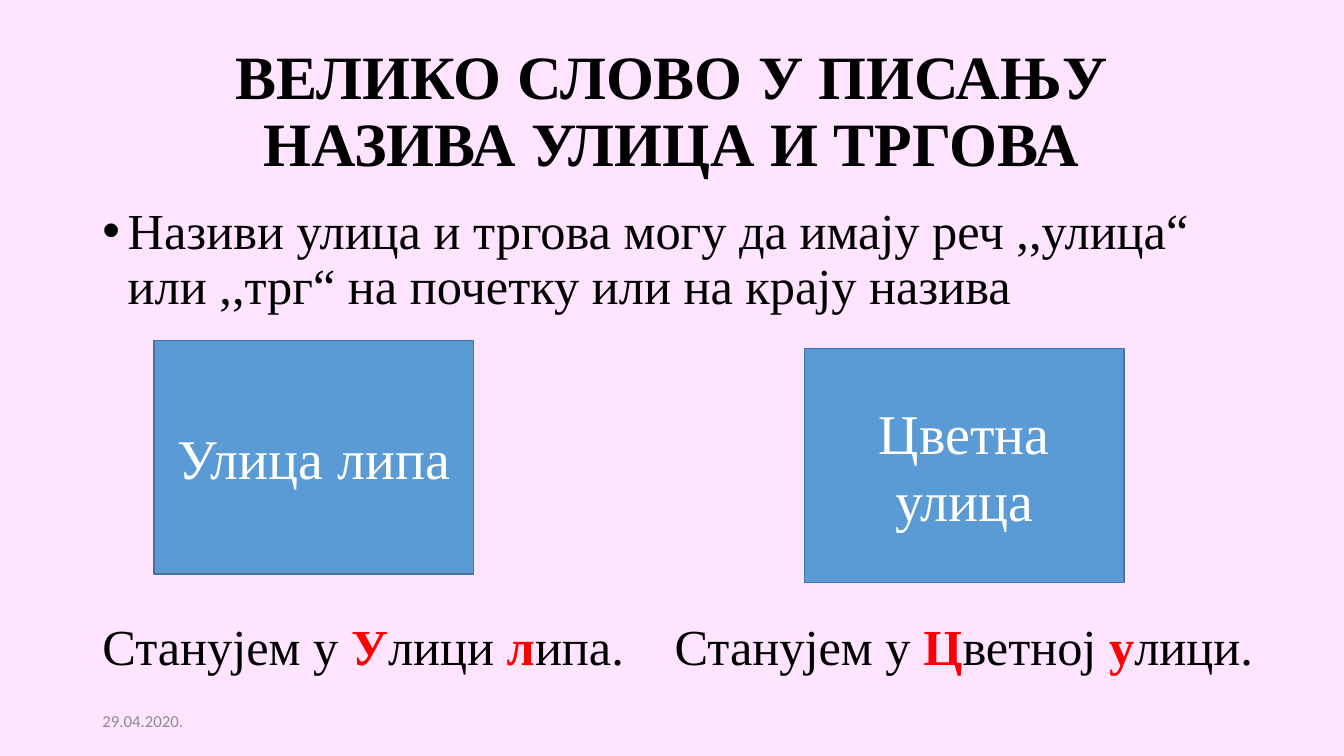
"""Build a slide on capital letters in the names of streets and squares."""
from lxml.etree import SubElement
from pptx import Presentation
from pptx.dml.color import RGBColor
from pptx.enum.shapes import MSO_SHAPE
from pptx.enum.text import MSO_ANCHOR, MSO_AUTO_SIZE, PP_ALIGN
from pptx.oxml.ns import qn
from pptx.util import Cm, Pt

COLORS = {
    "background": "FFE4FF",
    "text": "000000",
    "accent": "FF0000",
    "date": "8C8C8C",
    "box": "5B9BD5",
    "box_line": "43739E",
    "box_text": "FFFFFF",
}
SERIF = "Times New Roman"
MARGIN_LEFT, CONTENT_WIDTH = 2.33, 29.21


def color(name):
    return RGBColor.from_string(COLORS[name])


def write(shape, runs, size, anchor=MSO_ANCHOR.TOP, font=SERIF, **paragraph_format):
    """Fill a shape with one paragraph of (text, color name, bold) runs."""
    frame = shape.text_frame
    frame.word_wrap = True
    frame.auto_size = MSO_AUTO_SIZE.NONE
    frame.vertical_anchor = anchor
    paragraph = frame.paragraphs[0]
    for name, value in paragraph_format.items():
        setattr(paragraph, name, value)
    for text, color_name, bold in runs:
        run = paragraph.add_run()
        run.text = text
        run.font.color.rgb = color(color_name)
        for name, value in {"name": font, "size": Pt(size), "bold": bold}.items():
            setattr(run.font, name, value)
    return paragraph


presentation = Presentation()
presentation.slide_width, presentation.slide_height = Cm(33.87), Cm(19.05)
slide = presentation.slides.add_slide(presentation.slide_layouts[5])
slide.background.fill.solid()
slide.background.fill.fore_color.rgb = color("background")

rule = slide.shapes.add_textbox(Cm(MARGIN_LEFT), Cm(5.07), Cm(CONTENT_WIDTH), Cm(12.09))
rule_text = "Називи улица и тргова могу да имају реч ,,улица“ или ,,трг“ на почетку или на крају назива"
paragraph = write(rule, [(rule_text, "text", False)], 36, line_spacing=0.9, space_before=Pt(10))
properties = paragraph._p.get_or_add_pPr()
properties.set("marL", str(Cm(0.64)))
properties.set("indent", str(Cm(-0.64)))
SubElement(properties, qn("a:buFont"), typeface="Arial")
SubElement(properties, qn("a:buChar"), char="•")

date = slide.shapes.add_textbox(Cm(MARGIN_LEFT), Cm(17.66), Cm(7.62), Cm(1.01))
write(date, [("29.04.2020.", "date", False)], 12, MSO_ANCHOR.MIDDLE, "Calibri")

title = slide.shapes.title
title_place = {"left": MARGIN_LEFT, "top": 1.01, "width": CONTENT_WIDTH, "height": 3.68}
for name, value in title_place.items():
    setattr(title, name, Cm(value))
title_text = "ВЕЛИКО СЛОВО У ПИСАЊУ НАЗИВА УЛИЦА И ТРГОВА"
write(title, [(title_text, "text", True)], 44, MSO_ANCHOR.MIDDLE,
      alignment=PP_ALIGN.CENTER, line_spacing=0.9)

for street, left, top in [("Улица липа", 3.88, 8.58), ("Цветна улица", 20.27, 8.79)]:
    box = slide.shapes.add_shape(MSO_SHAPE.RECTANGLE, Cm(left), Cm(top), Cm(8.06), Cm(5.89))
    box.shadow.inherit = False
    box.fill.solid()
    box.fill.fore_color.rgb = color("box")
    box.line.color.rgb = color("box_line")
    box.line.width = Pt(1)
    write(box, [(street, "box_text", False)], 40, MSO_ANCHOR.MIDDLE, alignment=PP_ALIGN.CENTER)

examples = slide.shapes.add_textbox(Cm(MARGIN_LEFT), Cm(15.37), Cm(29.8), Cm(1.8))
pieces = ["Станујем у ", "У", "лици ", "л", "ипа.\tСтанујем у ", "Ц", "ветној ", "у", "лици."]
runs = [(piece, "accent" if index % 2 else "text", index % 2 == 1)
        for index, piece in enumerate(pieces)]
paragraph = write(examples, runs, 36)
tab_list = SubElement(paragraph._p.get_or_add_pPr(), qn("a:tabLst"))
SubElement(tab_list, qn("a:tab"), pos=str(Cm(14.42)), algn="l")

presentation.save("out.pptx")
